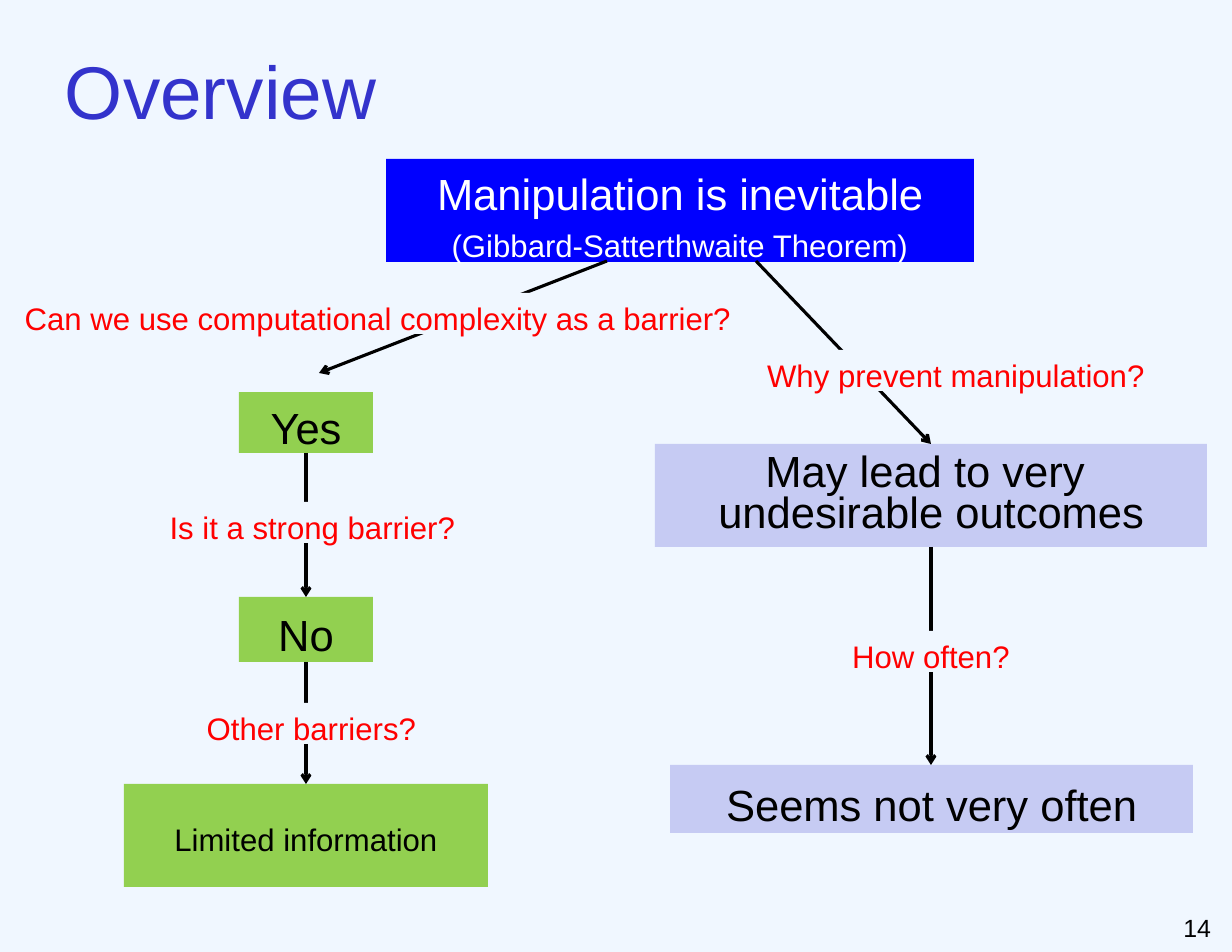
from lxml import etree
from pptx import Presentation
from pptx.dml.color import RGBColor
from pptx.enum.shapes import MSO_CONNECTOR, MSO_SHAPE
from pptx.enum.text import MSO_ANCHOR, MSO_AUTO_SIZE, PP_ALIGN
from pptx.oxml.ns import qn
from pptx.util import Emu, Pt

RECTANGLE = MSO_SHAPE.RECTANGLE
STRAIGHT = MSO_CONNECTOR.STRAIGHT
TOP, MIDDLE = MSO_ANCHOR.TOP, MSO_ANCHOR.MIDDLE
LEFT, CENTER, RIGHT = PP_ALIGN.LEFT, PP_ALIGN.CENTER, PP_ALIGN.RIGHT
NO_FIT, GROW = MSO_AUTO_SIZE.NONE, MSO_AUTO_SIZE.SHAPE_TO_FIT_TEXT
EMU_PER_PX = 914400 / 112
COLORS = {
    "background": "F0F7FF", "title": "3333CC", "theorem": "0000FF",
    "barrier": "92D050", "outcome": "3333CC", "question": "FF0000",
    "black": "000000", "white": "FFFFFF",
}


def px(length):
    return Emu(round(length * EMU_PER_PX))


def rgb(name):
    return RGBColor.from_string(COLORS[name])


class FlowSlide:
    """Holds the style and the slide, and draws each kind of element."""

    font = "Arial"
    spacing = 1.18

    def __init__(self, presentation):
        self.slide = presentation.slides.add_slide(presentation.slide_layouts[5])
        self.slide.background.fill.solid()
        self.slide.background.fill.fore_color.rgb = rgb("background")

    def set_lines(self, frame, lines, color, align, spacing, margins):
        frame.margin_left, frame.margin_top, frame.margin_right, frame.margin_bottom = map(px, margins)
        for index, (words, size) in enumerate(lines):
            paragraph = frame.add_paragraph() if index else frame.paragraphs[0]
            paragraph.alignment = align
            paragraph.line_spacing = spacing
            run = paragraph.add_run()
            run.text = words
            run.font.name = self.font
            run.font.size = Pt(size)
            run.font.color.rgb = rgb(color)

    def title(self, words, *area):
        heading = self.slide.shapes.title
        heading.left, heading.top, heading.width, heading.height = map(px, area)
        frame = heading.text_frame
        frame.auto_size = NO_FIT
        frame.vertical_anchor = MIDDLE
        self.set_lines(frame, [(words, 48)], "title", LEFT, 1.24, (12, 7, 12, 7))

    def page_number(self, number, *area):
        frame = self.slide.shapes.add_textbox(*map(px, area)).text_frame
        frame.word_wrap = True
        self.set_lines(frame, [(number, 16)], "black", RIGHT, 1, (12, 7, 12, 7))

    def rectangle(self, area, fill):
        panel = self.slide.shapes.add_shape(RECTANGLE, *map(px, area))
        panel.shadow.inherit = False
        panel.fill.solid()
        panel.fill.fore_color.rgb = rgb(fill)
        panel.line.fill.background()
        return panel

    def box(self, lines, area, fill, color="black", spacing=spacing, opacity=100):
        panel = self.rectangle(area, fill)
        if opacity < 100:
            tint = panel._element.spPr.find(".//" + qn("a:srgbClr"))
            etree.SubElement(tint, qn("a:alpha"), val=str(opacity * 1000))
        frame = panel.text_frame
        frame.word_wrap = False
        frame.vertical_anchor = MIDDLE
        self.set_lines(frame, lines, color, CENTER, spacing, (11, 6, 11, 6))

    def question(self, words, area, right_margin):
        frame = self.rectangle(area, "background").text_frame
        frame.word_wrap = True
        frame.auto_size = GROW
        frame.vertical_anchor = TOP
        self.set_lines(frame, [(words, 20)], "question", CENTER, self.spacing, (11, 0, right_margin, 0))

    def arrow(self, *ends):
        link = self.slide.shapes.add_connector(STRAIGHT, *map(px, ends))
        link.line.color.rgb = rgb("black")
        link.line.width = Pt(2)
        properties = link._element.spPr
        etree.SubElement(properties.find(qn("a:ln")), qn("a:tailEnd"), type="arrow")
        etree.SubElement(properties, qn("a:effectLst"))


def main():
    presentation = Presentation()
    presentation.slide_width, presentation.slide_height = px(1232), px(952)
    overview = FlowSlide(presentation)
    overview.page_number("14", 937, 906, 286, 65)
    overview.title("Overview", 53, 0, 410, 157)

    theorem = [("Manipulation is inevitable", 28), ("(Gibbard-Satterthwaite Theorem)", 20)]
    overview.box(theorem, (386, 159, 588, 103), "theorem", "white")

    barriers = [
        ("Yes", 28, (239, 392, 134, 61)),
        ("No", 28, (239, 597, 134, 65)),
        ("Limited information", 20, (124, 784, 364, 103)),
    ]
    for words, size, area in barriers:
        overview.box([(words, size)], area, "barrier")

    outcomes = [
        (["May lead to very ", "undesirable outcomes"], (655, 444, 552, 103), 0.8),
        (["Seems not very often"], (670, 765, 523, 68), 1.18),
    ]
    for lines, area, spacing in outcomes:
        overview.box([(line, 28) for line in lines], area, "outcome", spacing=spacing, opacity=22)

    arrows = [
        (607, 261, 319, 373), (306, 453, 306, 597), (306, 662, 306, 784),
        (756, 261, 931, 444), (931, 547, 931, 765),
    ]
    for ends in arrows:
        overview.arrow(*ends)

    questions = [
        ("Can we use computational complexity as a barrier?", 0, 293, 756, 11),
        ("Is it a strong barrier?", 157, 502, 300, 0),
        ("Other barriers?", 156, 703, 300, 0),
        ("Why prevent manipulation?", 719, 350, 474, 11),
        ("How often?", 694, 631, 474, 11),
    ]
    for words, left, top, width, right_margin in questions:
        overview.question(words, (left, top, width, 41), right_margin)

    presentation.save("out.pptx")


if __name__ == "__main__":
    main()
